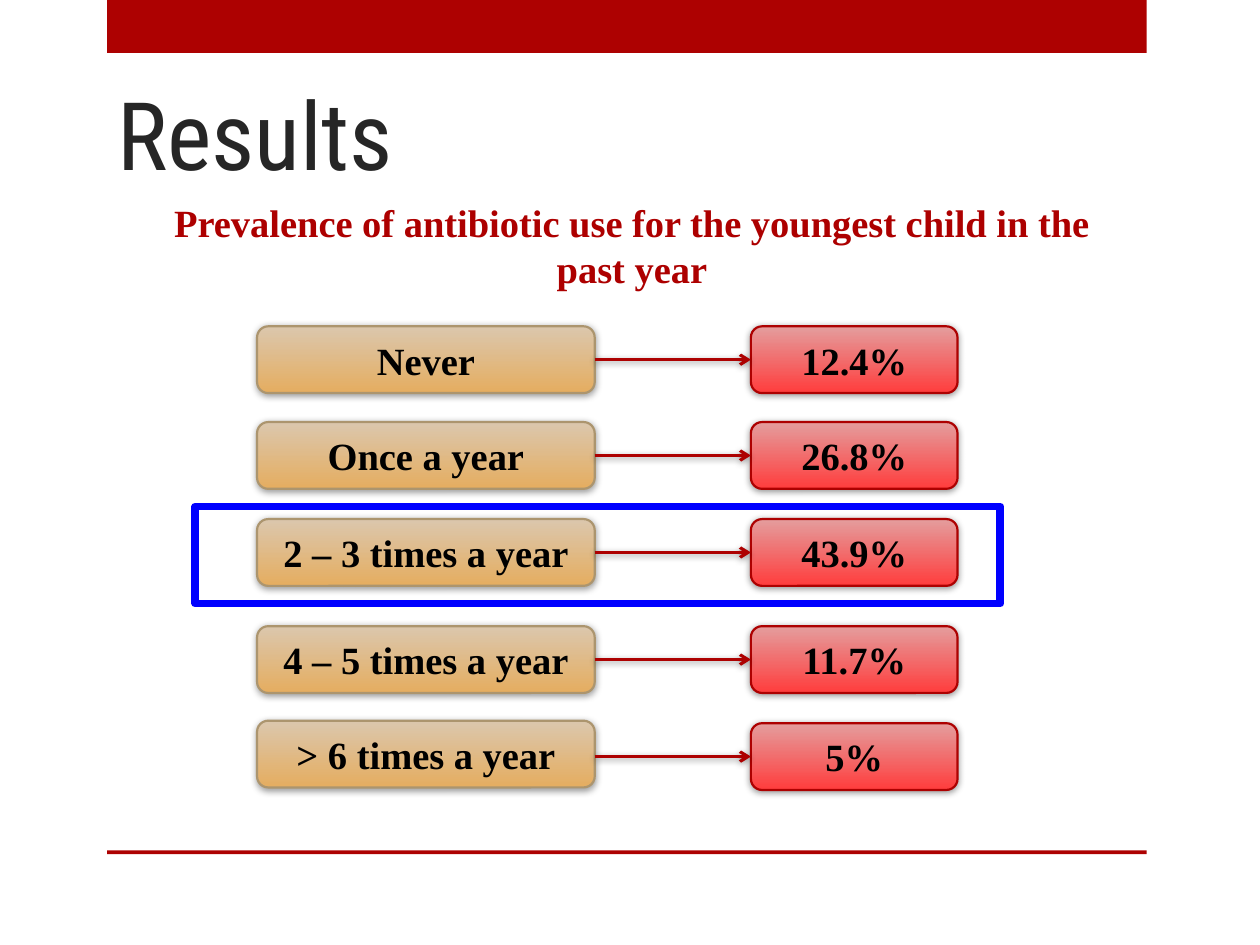
import pptx
import pptx.dml.color
import pptx.enum.shapes
import pptx.enum.text
import pptx.oxml
import pptx.oxml.ns
import pptx.util

COLUMNS, ROWS = 100, 75
SHAPES = pptx.enum.shapes.MSO_SHAPE
ALIGN = pptx.enum.text.PP_ALIGN
ANCHOR = pptx.enum.text.MSO_ANCHOR

RED = "AD0101"
TAN_FILL, TAN_LINE = ("DBC7AD", "E5AD60"), "AC956E"
RED_FILL = ("E49D9D", "FF3D3D")
SHADOW = (
    '<a:effectLst %s><a:outerShdw blurRad="50800" dist="12700" dir="5280000" rotWithShape="0">'
    '<a:srgbClr val="000000"><a:alpha val="40000"/></a:srgbClr></a:outerShdw></a:effectLst>'
    % pptx.oxml.ns.nsdecls("a")
)
ARROW = '<a:tailEnd type="arrow" %s/>' % pptx.oxml.ns.nsdecls("a")


def color(value):
    return pptx.dml.color.RGBColor.from_string(value)


class ResultSlide:
    font = "Times New Roman"
    size = 22

    def __init__(self, deck):
        self.deck = deck
        self.slide = deck.slides.add_slide(deck.slide_layouts[5])

    def place(self, *at):
        left, top, width, height = at
        x, y = self.deck.slide_width / COLUMNS, self.deck.slide_height / ROWS
        return int(left * x), int(top * y), int(width * x), int(height * y)

    def add_text(self, shape, text, ink="000000", align=ALIGN.CENTER, anchor=ANCHOR.MIDDLE,
                 font=None, size=None, bold=True):
        frame = shape.text_frame
        frame.word_wrap = True
        frame.vertical_anchor = anchor
        para = frame.paragraphs[0]
        para.alignment = align
        run = para.add_run()
        run.text = text
        run.font.name = font or self.font
        run.font.size = pptx.util.Pt(size or self.size)
        run.font.bold = bold
        run.font.color.rgb = color(ink)

    def title(self, text, *at):
        shape = self.slide.shapes.title
        shape.left, shape.top, shape.width, shape.height = self.place(*at)
        self.add_text(shape, text, "262626", ALIGN.LEFT, ANCHOR.BOTTOM,
                      "Roboto Condensed", 54, False)

    def heading(self, text, *at):
        box = self.slide.shapes.add_textbox(*self.place(*at))
        self.add_text(box, text, "AD0000", anchor=ANCHOR.TOP)

    def bar(self, *at):
        bar = self.slide.shapes.add_shape(SHAPES.RECTANGLE, *self.place(*at))
        bar.shadow.inherit = False
        bar.fill.solid()
        bar.fill.fore_color.rgb = color(RED)
        bar.line.fill.background()

    def frame(self, *at):
        frame = self.slide.shapes.add_shape(SHAPES.RECTANGLE, *self.place(*at))
        frame.shadow.inherit = False
        frame.fill.background()
        frame.line.color.rgb = color("0000FF")
        frame.line.width = pptx.util.Pt(4.5)

    def button(self, text, shades, edge, *at):
        box = self.slide.shapes.add_shape(SHAPES.ROUNDED_RECTANGLE, *self.place(*at))
        box.fill.gradient()
        box.fill.gradient_angle = 270
        for stop, shade, position in zip(box.fill.gradient_stops, shades, (0, 1)):
            stop.color.rgb = color(shade)
            stop.position = position
        box.line.color.rgb = color(edge)
        box.line.width = pptx.util.Pt(1.25)
        box.element.spPr.append(pptx.oxml.parse_xml(SHADOW))
        self.add_text(box, text)

    def arrow(self, start, end, row):
        left, top, width, _ = self.place(start, row, end - start, 0)
        arrow = self.slide.shapes.add_connector(
            pptx.enum.shapes.MSO_CONNECTOR.STRAIGHT, left, top, left + width, top)
        arrow.line.color.rgb = color(RED)
        arrow.line.width = pptx.util.Pt(1.75)
        properties = arrow.element.spPr
        properties.find(pptx.oxml.ns.qn("a:ln")).append(pptx.oxml.parse_xml(ARROW))
        properties.append(pptx.oxml.parse_xml(SHADOW))


def main():
    deck = pptx.Presentation()
    deck.slide_width, deck.slide_height = pptx.util.Inches(10), pptx.util.Inches(7.5)
    page = ResultSlide(deck)

    page.bar(8.5, 0, 82.5, 4.2)
    page.bar(8.5, 67.5, 82.5, 0.3)
    page.title("Results", 8.3, 2, 74.2, 13.5)
    page.heading("Prevalence of antibiotic use for the youngest child in the past year",
                 10.2, 15.3, 79.9, 8.4)
    page.frame(15.5, 40.2, 63.9, 7.7)

    label_left, label_width = 20.4, 26.8
    share_left, share_width = 59.6, 16.4
    height = 5.3
    answers = [
        ("Never", 25.9, "12.4%", 25.9),
        ("Once a year", 33.5, "26.8%", 33.5),
        ("2 – 3 times a year", 41.2, "43.9%", 41.2),
        ("4 – 5 times a year", 49.7, "11.7%", 49.7),
        ("> 6 times a year", 57.2, "5%", 57.4),
    ]
    for label, label_top, share, share_top in answers:
        page.button(label, TAN_FILL, TAN_LINE, label_left, label_top, label_width, height)
        page.button(share, RED_FILL, RED, share_left, share_top, share_width, height)
        page.arrow(label_left + label_width, share_left, share_top + height / 2)

    deck.save("out.pptx")


if __name__ == "__main__":
    main()
